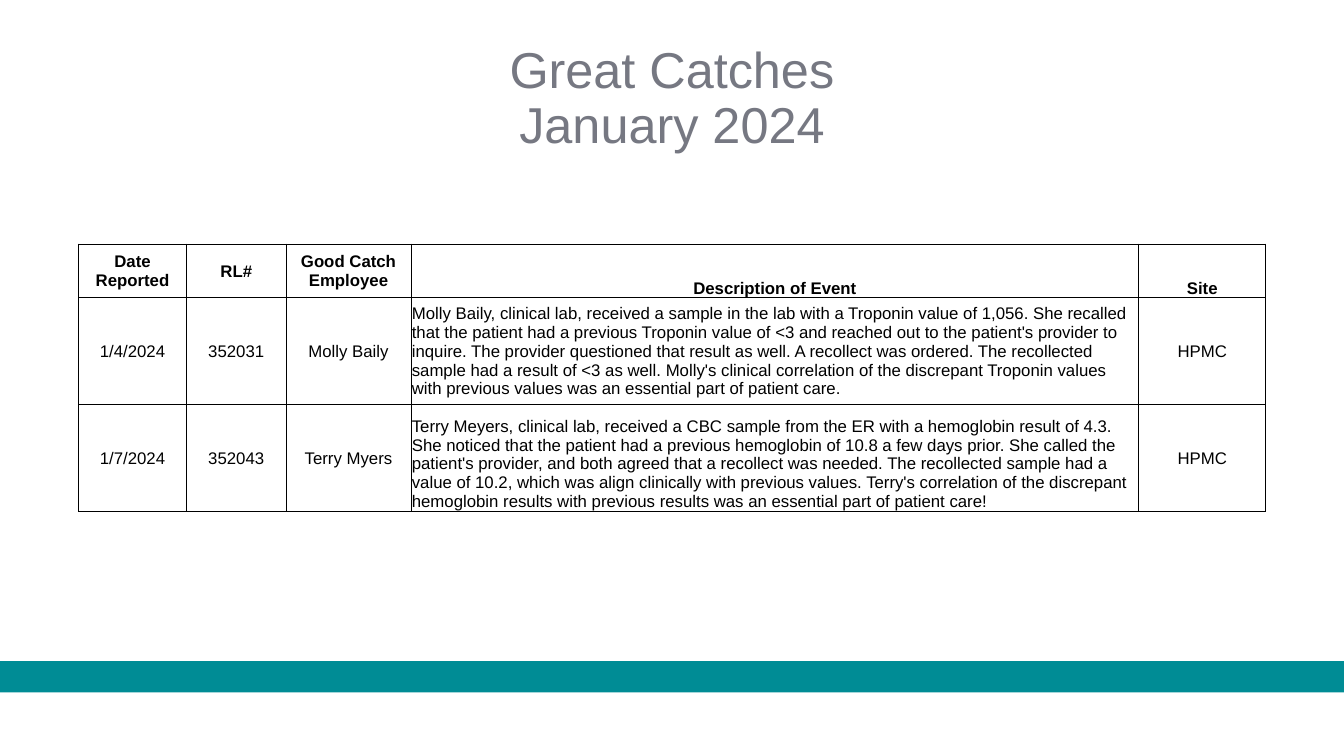
from lxml import etree
from pptx import Presentation
from pptx import util as u
from pptx.dml.color import RGBColor
from pptx.enum import shapes, text
from pptx.oxml import ns

COLORS = {"band": "008C95", "title": "767882", "ink": "000000"}
FONT = "Arial"
MIDDLE, BOTTOM = text.MSO_ANCHOR.MIDDLE, text.MSO_ANCHOR.BOTTOM
CENTER, LEFT = text.PP_ALIGN.CENTER, text.PP_ALIGN.LEFT

HEADERS = ["Date Reported", "RL#", "Good Catch Employee", "Description of Event", "Site"]
CATCHES = [
    ["1/4/2024", "352031", "Molly Baily",
     "Molly Baily, clinical lab, received a sample in the lab with a Troponin value of 1,056. "
     "She recalled that the patient had a previous Troponin value of <3 and reached out to the "
     "patient's provider to inquire. The provider questioned that result as well. A recollect "
     "was ordered. The recollected sample had a result of <3 as well. Molly's clinical "
     "correlation of the discrepant Troponin values with previous values was an essential part "
     "of patient care.", "HPMC"],
    ["1/7/2024", "352043", "Terry Myers",
     "Terry Meyers, clinical lab, received a CBC sample from the ER with a hemoglobin result of "
     "4.3. She noticed that the patient had a previous hemoglobin of 10.8 a few days prior. She "
     "called the patient's provider, and both agreed that a recollect was needed. The "
     "recollected sample had a value of 10.2, which was align clinically with previous values. "
     "Terry's correlation of the discrepant hemoglobin results with previous results was an "
     "essential part of patient care!", "HPMC"],
]
COLUMN_WIDTHS = [2.72, 2.51, 3.15, 18.34, 3.2]
ROW_HEIGHTS = [1.35, 2.69, 2.69]
DESCRIPTION = HEADERS.index("Description of Event")
BOTTOM_CELLS = {(0, 3), (0, 4), (2, 3)}


def add_span(para, words, size, color, bold=False):
    span = para.add_run()
    span.text = words
    span.font.name = FONT
    span.font.size = u.Pt(size)
    span.font.bold = bold
    span.font.color.rgb = RGBColor.from_string(COLORS[color])


def add_borders(cell):
    properties = cell._tc.get_or_add_tcPr()
    for index, side in enumerate(("lnL", "lnR", "lnT", "lnB")):
        line = etree.Element(ns.qn(f"a:{side}"), w=str(u.Pt(0.5)))
        fill = etree.SubElement(line, ns.qn("a:solidFill"))
        etree.SubElement(fill, ns.qn("a:srgbClr"), val=COLORS["ink"])
        properties.insert(index, line)


deck = Presentation()
deck.slide_width, deck.slide_height = u.Cm(33.87), u.Cm(19.05)
page = deck.slides.add_slide(deck.slide_layouts[6])

band = page.shapes.add_shape(
    shapes.MSO_SHAPE.RECTANGLE, 0, u.Cm(16.66), deck.slide_width, u.Cm(0.79))
band.shadow.inherit = False
band.fill.solid()
band.fill.fore_color.rgb = RGBColor.from_string(COLORS["band"])
band.line.fill.background()

title = page.shapes.add_textbox(u.Cm(2.33), u.Cm(1.02), u.Cm(29.21), u.Cm(3.68))
title.text_frame.word_wrap = True
title.text_frame.vertical_anchor = text.MSO_ANCHOR.TOP
para = title.text_frame.paragraphs[0]
para.alignment = CENTER
para.line_spacing = 0.9
add_span(para, "Great Catches", 36, "title")
para.add_line_break()
add_span(para, "January 2024", 36, "title")

rows = [HEADERS] + CATCHES
frame = page.shapes.add_table(
    len(rows), len(HEADERS), u.Cm(1.98), u.Cm(6.15),
    u.Cm(sum(COLUMN_WIDTHS)), u.Cm(sum(ROW_HEIGHTS)))
table = frame.table
table.horz_banding = False
for column, width in zip(table.columns, COLUMN_WIDTHS):
    column.width = u.Cm(width)
for row, height in zip(table.rows, ROW_HEIGHTS):
    row.height = u.Cm(height)

for row_index, values in enumerate(rows):
    for column_index, words in enumerate(values):
        cell = table.cell(row_index, column_index)
        cell.margin_left = cell.margin_right = cell.margin_top = u.Cm(0.02)
        cell.margin_bottom = 0
        cell.vertical_anchor = BOTTOM if (row_index, column_index) in BOTTOM_CELLS else MIDDLE
        cell.fill.background()
        add_borders(cell)
        is_header = row_index == 0
        para = cell.text_frame.paragraphs[0]
        para.alignment = LEFT if column_index == DESCRIPTION and not is_header else CENTER
        add_span(para, words, 12, "ink", bold=is_header)

deck.save("out.pptx")
